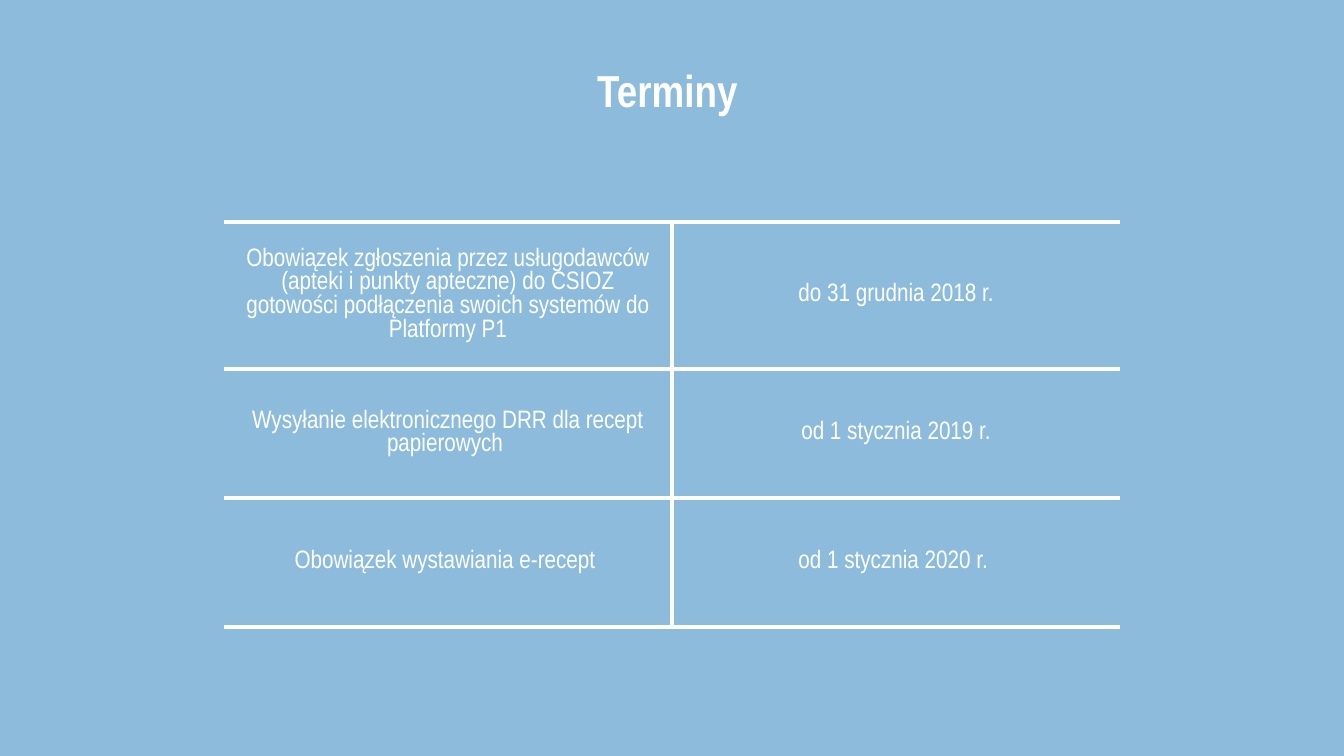
import pptx
import pptx.dml.color
import pptx.enum.text
import pptx.oxml
import pptx.oxml.ns
import pptx.util

Inches = pptx.util.Inches
Pt = pptx.util.Pt
CENTER = pptx.enum.text.PP_ALIGN.CENTER
ANCHOR = pptx.enum.text.MSO_ANCHOR

ROWS = [
    ("Obowiązek zgłoszenia przez usługodawców (apteki i punkty apteczne) "
     "do CSIOZ gotowości podłączenia swoich systemów do Platformy P1",
     "do 31 grudnia 2018 r."),
    ("Wysyłanie elektronicznego DRR dla recept papierowych ",
     "od 1 stycznia 2019 r."),
    ("Obowiązek wystawiania e-recept ", "od 1 stycznia 2020 r. "),
]


def color(code):
    return pptx.dml.color.RGBColor.from_string(code)


class Deck:
    font = "Arial Narrow"
    ink = "FFFFFF"
    back = "8CBBDC"
    line = 3

    def __init__(self):
        self.file = pptx.Presentation()
        self.file.slide_width = Inches(13.33)
        self.file.slide_height = Inches(7.5)
        self.slide = self.file.slides.add_slide(self.file.slide_layouts[5])
        fill = self.slide.background.fill
        fill.solid()
        fill.fore_color.rgb = color(self.back)

    def label(self, frame, text, size, bold=False):
        para = frame.paragraphs[0]
        para.alignment = CENTER
        run = para.add_run()
        run.text = text
        run.font.name = self.font
        run.font.size = Pt(size)
        run.font.bold = bold
        run.font.color.rgb = color(self.ink)

    def title(self, text, left, top, width, height):
        shape = self.slide.shapes.title
        shape.left, shape.top = Inches(left), Inches(top)
        shape.width, shape.height = Inches(width), Inches(height)
        frame = shape.text_frame
        frame.word_wrap = True
        frame.auto_size = pptx.enum.text.MSO_AUTO_SIZE.NONE
        frame.vertical_anchor = ANCHOR.BOTTOM
        self.label(frame, text, 32, True)

    def border(self, cell, hidden):
        props = cell._tc.get_or_add_tcPr()
        space = pptx.oxml.ns.nsdecls("a")
        for side in "LRTB":
            if side == hidden:
                paint = "<a:noFill/>"
            else:
                paint = f'<a:solidFill><a:srgbClr val="{self.ink}"/></a:solidFill>'
            props.append(pptx.oxml.parse_xml(
                f'<a:ln{side} {space} w="{Pt(self.line)}">{paint}</a:ln{side}>'))

    def table(self, rows, left, top, width, heights):
        count = len(rows[0])
        frame = self.slide.shapes.add_table(
            len(rows), count, Inches(left), Inches(top),
            Inches(width), Inches(sum(heights)))
        grid = frame.table
        grid.first_row = False
        grid.horz_banding = False
        for column in grid.columns:
            column.width = Inches(width / count)
        for row, height, texts in zip(grid.rows, heights, rows):
            row.height = Inches(height)
            for cell, text, hidden in zip(row.cells, texts, "LR"):
                self.border(cell, hidden)
                cell.fill.background()
                cell.vertical_anchor = ANCHOR.MIDDLE
                self.label(cell.text_frame, text, 18)


def main():
    deck = Deck()
    deck.title("Terminy ", 1.26, 0.57, 10.82, 0.64)
    deck.table(ROWS, 2.22, 2.2, 8.89, [1.46, 1.28, 1.28])
    deck.file.save("out.pptx")


if __name__ == "__main__":
    main()
